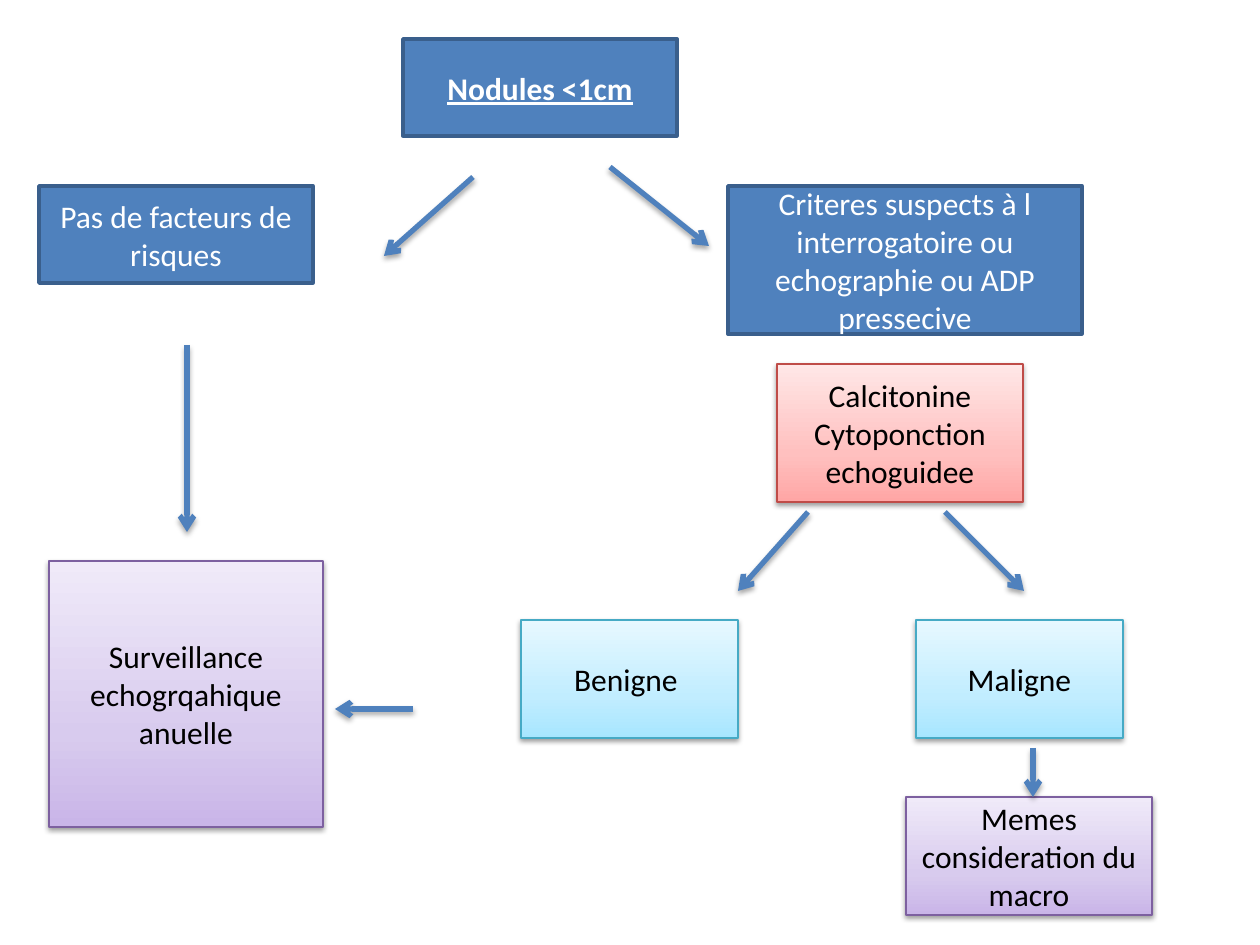
from copy import deepcopy

from lxml import etree
from pptx import Presentation
from pptx.dml.color import RGBColor
from pptx.enum.shapes import MSO_CONNECTOR, MSO_SHAPE
from pptx.enum.text import MSO_ANCHOR, PP_ALIGN
from pptx.oxml.ns import qn
from pptx.util import Pt

PX = 914400 / 126
RECTANGLE = MSO_SHAPE.RECTANGLE
STRAIGHT = MSO_CONNECTOR.STRAIGHT
MIDDLE = MSO_ANCHOR.MIDDLE
CENTER = PP_ALIGN.CENTER

WHITE = RGBColor(0xFF, 0xFF, 0xFF)
BLACK = RGBColor(0x00, 0x00, 0x00)
BLUE = RGBColor(0x4F, 0x81, 0xBD)
DARK_BLUE = RGBColor(0x3A, 0x5F, 0x8C)
PURPLE = RGBColor(0x7D, 0x60, 0xA0)
RED = RGBColor(0xBF, 0x4C, 0x48)
AQUA = RGBColor(0x46, 0xAA, 0xC5)
# Gradient colours run from the bottom of a box to its top.
PURPLE_TINTS = (RGBColor(0xC9, 0xB5, 0xE8), RGBColor(0xD8, 0xCB, 0xEE), RGBColor(0xF0, 0xEA, 0xF9))
RED_TINTS = (RGBColor(0xFF, 0xA6, 0xA5), RGBColor(0xFF, 0xC0, 0xBF), RGBColor(0xFF, 0xE7, 0xE7))
AQUA_TINTS = (RGBColor(0xA7, 0xE6, 0xFF), RGBColor(0xC1, 0xED, 0xFF), RGBColor(0xE7, 0xF8, 0xFF))
TINT_POSITIONS = (0, 0.35, 1)


def px(value):
    return round(value * PX)


def write_text(shape, text, size=18, color=BLACK, bold=False, underline=False):
    frame = shape.text_frame
    frame.word_wrap = True
    frame.vertical_anchor = MIDDLE
    para = frame.paragraphs[0]
    para.alignment = CENTER
    span = para.add_run()
    span.text = text
    font = span.font
    font.name, font.size, font.color.rgb = "Calibri", Pt(size), color
    font.bold, font.underline = bold, underline


def add_shadow(shape, opacity, distance):
    properties = shape.element.spPr
    effects = properties.find(qn("a:effectLst"))
    if effects is None:
        effects = etree.SubElement(properties, qn("a:effectLst"))
    shadow = etree.SubElement(
        effects, qn("a:outerShdw"), blurRad=str(Pt(3.1)), dist=str(Pt(distance)),
        dir="5400000", rotWithShape="0")
    color = etree.SubElement(shadow, qn("a:srgbClr"), val=str(BLACK))
    etree.SubElement(color, qn("a:alpha"), val=str(opacity * 1000))


def add_rectangle(page, box, line_color, line_width):
    shape = page.shapes.add_shape(RECTANGLE, *map(px, box))
    shape.line.color.rgb = line_color
    shape.line.width = Pt(line_width)
    shape.shadow.inherit = False
    return shape


def add_solid_box(page, box, text, **text_format):
    shape = add_rectangle(page, box, DARK_BLUE, 2)
    shape.fill.solid()
    shape.fill.fore_color.rgb = BLUE
    write_text(shape, text, color=WHITE, **text_format)


def add_tinted_box(page, box, text, tints, line_color):
    shape = add_rectangle(page, box, line_color, 0.75)
    fill = shape.fill
    fill.gradient()
    fill.gradient_angle = 90
    stops = shape.element.spPr.find(qn("a:gradFill")).find(qn("a:gsLst"))
    stops.insert(1, deepcopy(stops[0]))
    for stop, position, tint in zip(fill.gradient_stops, TINT_POSITIONS, tints):
        stop.position = position
        stop.color.rgb = tint
    add_shadow(shape, opacity=38, distance=1.6)
    write_text(shape, text)


def add_arrow(page, start, end):
    arrow = page.shapes.add_connector(STRAIGHT, *map(px, (*start, *end)))
    arrow.line.color.rgb = BLUE
    arrow.line.width = Pt(3)
    etree.SubElement(arrow.line._get_or_add_ln(), qn("a:tailEnd"), type="arrow")
    add_shadow(arrow, opacity=35, distance=1.8)


def draw_heading(page, left, top, width, height):
    add_solid_box(page, (left, top, width, height), "Nodules <1cm", bold=True, underline=True)
    below = top + height
    add_arrow(page, (left + 70, below + 41), (left - 19, below + 120))
    add_arrow(page, (left + 207, below + 31), (left + 306, below + 110))


def draw_low_risk_branch(page, left, top, width, height):
    box_width = width - 10
    add_solid_box(page, (left, top, box_width, 97), "Pas de facteurs de risques")
    add_arrow(page, (left + 148, top + 159), (left + 148, top + 346))
    add_tinted_box(page, (left + 10, top + height - 266, box_width, 266),
                   "Surveillance echogrqahique anuelle", PURPLE_TINTS, PURPLE)


def draw_suspect_branch(page, left, top, width, height):
    right, bottom = left + width, top + height
    result_top = top + 434
    add_solid_box(page, (left + 207, top, 354, 148),
                  "Criteres suspects à l interrogatoire ou echographie ou ADP pressecive")
    add_tinted_box(page, (left + 256, top + 178, 246, 138),
                   "Calcitonine Cytoponction echoguidee", RED_TINTS, RED)
    add_arrow(page, (left + 287, top + 326), (left + 217, top + 405))
    add_arrow(page, (left + 424, top + 326), (left + 503, top + 405))
    add_tinted_box(page, (left, result_top, 217, 118), "Benigne ", AQUA_TINTS, AQUA)
    add_tinted_box(page, (left + 395, result_top, 207, 118), "Maligne", AQUA_TINTS, AQUA)
    add_arrow(page, (left - 108, top + 523), (left - 186, top + 523))
    add_tinted_box(page, (right - 246, bottom - 118, 246, 118),
                   "Memes consideration du macro", PURPLE_TINTS, PURPLE)
    add_arrow(page, (right - 119, bottom - 167), (right - 119, bottom - 118))


def main():
    deck = Presentation()
    deck.slide_width, deck.slide_height = px(1260), px(945)
    page = deck.slides.add_slide(deck.slide_layouts[6])
    draw_heading(page, 403, 39, 274, 97)
    draw_low_risk_branch(page, 39, 186, 284, 641)
    draw_suspect_branch(page, 521, 186, 631, 729)
    deck.save("out.pptx")


if __name__ == "__main__":
    main()
